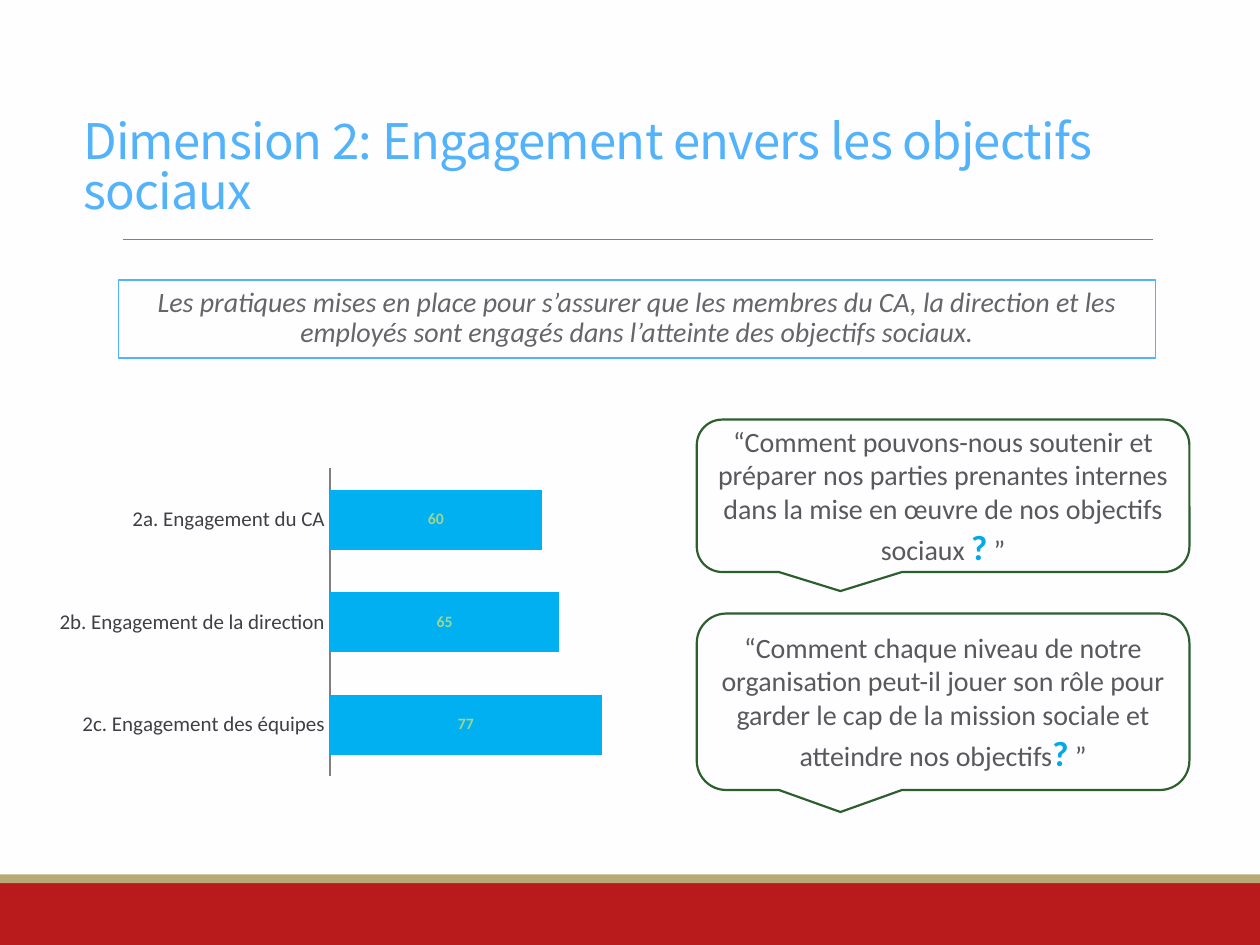
from lxml import etree
from pptx import Presentation
from pptx import oxml
from pptx.chart import data
from pptx.dml.color import RGBColor
from pptx.enum import chart as ch, shapes, text
from pptx.oxml import ns
from pptx.util import Inches, Pt

PAPER = RGBColor(0xFE, 0xFD, 0xFF)
RED = RGBColor(0xB9, 0x1A, 0x1B)
GOLD = RGBColor(0xB8, 0xAA, 0x76)
GREY = RGBColor(0x80, 0x80, 0x80)
SKY = RGBColor(0x53, 0xB3, 0xFA)
SUMMARY_GREY = RGBColor(0x66, 0x66, 0x66)
QUOTE_GREY = RGBColor(0x59, 0x59, 0x59)
MARK_BLUE = RGBColor(0x00, 0xAA, 0xE6)
GREEN = RGBColor(0x2D, 0x5F, 0x2D)
BAR_BLUE = RGBColor(0x00, 0xB0, 0xF0)
VALUE_GREEN = RGBColor(0x9D, 0xD6, 0x90)
CATEGORY_GREY = RGBColor(0x40, 0x40, 0x40)
BLACK = RGBColor(0, 0, 0)


def apply(target, values):
    for name, value in values.items():
        setattr(target, name, value)


def style_font(font, size, color, name="Calibri", bold=False, italic=False):
    apply(font, {"size": Pt(size), "name": name, "bold": bold, "italic": italic})
    font.color.rgb = color


deck = Presentation()
apply(deck, {"slide_width": Inches(10), "slide_height": Inches(7.5)})
slide = deck.slides.add_slide(deck.slide_layouts[1])
slide.background.fill.solid()
slide.background.fill.fore_color.rgb = PAPER

for top, height, color in [(7, 0.5, RED), (6.94, 0.07, GOLD)]:
    band = slide.shapes.add_shape(shapes.MSO_SHAPE.RECTANGLE, 0, Inches(top), Inches(10), Inches(height))
    band.shadow.inherit = False
    band.fill.solid()
    band.fill.fore_color.rgb = color
    band.line.fill.background()

rule = slide.shapes.add_connector(
    shapes.MSO_CONNECTOR.STRAIGHT, Inches(0.98), Inches(1.9), Inches(9.15), Inches(1.9))
rule.line.color.rgb = GREY
rule.line.width = Pt(0.5)
etree.SubElement(rule._element.spPr, ns.qn("a:effectLst"))

heading = slide.shapes.title
apply(heading, {"left": Inches(0.56), "top": Inches(0.2), "width": Inches(9.07), "height": Inches(1.59)})
heading.text_frame.text = "Dimension 2: Engagement envers les objectifs sociaux"
apply(heading.text_frame, {"vertical_anchor": text.MSO_ANCHOR.BOTTOM, "auto_size": text.MSO_AUTO_SIZE.NONE})
heading_line = heading.text_frame.paragraphs[0]
apply(heading_line, {"alignment": text.PP_ALIGN.LEFT, "line_spacing": 0.85})
style_font(heading_line.runs[0].font, 28, SKY, "Noto Sans CJK KR")
heading_line.runs[0]._r.get_or_add_rPr().set("spc", "-40")

summary = slide.placeholders[1]
apply(summary, {"left": Inches(0.94), "top": Inches(2.22), "width": Inches(8.23), "height": Inches(0.62)})
summary.line.color.rgb = SKY
summary.line.width = Pt(1)
summary.text_frame.text = (
    "Les pratiques mises en place pour s’assurer que les membres du CA, la direction "
    "et les employés sont engagés dans l’atteinte des objectifs sociaux.")
apply(summary.text_frame, {
    "vertical_anchor": text.MSO_ANCHOR.MIDDLE, "auto_size": text.MSO_AUTO_SIZE.NONE,
    "margin_left": 0, "margin_right": 0, "margin_top": Inches(0.05), "margin_bottom": Inches(0.05)})
summary_line = summary.text_frame.paragraphs[0]
apply(summary_line, {"alignment": text.PP_ALIGN.CENTER, "line_spacing": 0.9,
                     "space_before": Pt(0), "space_after": Pt(1.5)})
summary_format = summary_line._p.get_or_add_pPr()
summary_format.set("marL", "0")
summary_format.set("indent", "0")
etree.SubElement(summary_format, ns.qn("a:buNone"))
style_font(summary_line.runs[0].font, 16, SUMMARY_GREY, italic=True)

questions = [
    (3.33, 1.21, "“Comment pouvons-nous soutenir et préparer nos parties prenantes internes "
                 "dans la mise en œuvre de nos objectifs sociaux "),
    (4.87, 1.4, "“Comment chaque niveau de notre organisation peut-il jouer son rôle pour "
                "garder le cap de la mission sociale et atteindre nos objectifs"),
]
for top, height, question in questions:
    bubble = slide.shapes.add_shape(
        shapes.MSO_SHAPE.ROUNDED_RECTANGULAR_CALLOUT,
        Inches(5.53), Inches(top), Inches(3.91), Inches(height))
    bubble.shadow.inherit = False
    bubble.fill.solid()
    bubble.fill.fore_color.rgb = PAPER
    bubble.line.color.rgb = GREEN
    bubble.line.width = Pt(1.25)
    apply(bubble.text_frame, {"word_wrap": True, "vertical_anchor": text.MSO_ANCHOR.MIDDLE})
    question_line = bubble.text_frame.paragraphs[0]
    question_line.alignment = text.PP_ALIGN.CENTER
    for words, size, color, bold in [
            (question, 16, QUOTE_GREY, False), ("?", 20, MARK_BLUE, True), (" ”", 16, QUOTE_GREY, False)]:
        part = question_line.add_run()
        part.text = words
        style_font(part.font, size, color, bold=bold)

scores = data.CategoryChartData(number_format="0")
scores.categories = ["2a. Engagement du CA", "2b. Engagement de la direction", "2c. Engagement des équipes"]
scores.add_series("Series 1", [60, 65, 77])
engagement = slide.shapes.add_chart(
    ch.XL_CHART_TYPE.BAR_CLUSTERED, Inches(-0.42), Inches(2.86), Inches(5.96), Inches(4.52), scores).chart
apply(engagement, {"has_legend": False, "has_title": False})
style_font(engagement.font, 10, BLACK)

topics = engagement.category_axis
apply(topics, {"reverse_order": True, "major_tick_mark": ch.XL_TICK_MARK.NONE,
               "minor_tick_mark": ch.XL_TICK_MARK.NONE, "has_major_gridlines": False})
topics.format.line.color.rgb = GREY
style_font(topics.tick_labels.font, 12, CATEGORY_GREY)
apply(engagement.value_axis, {"minimum_scale": 0, "maximum_scale": 100,
                              "has_major_gridlines": False, "visible": False})

bars = engagement.plots[0]
apply(bars, {"gap_width": 70, "vary_by_categories": False, "has_data_labels": True})
bars.series[0].format.fill.solid()
bars.series[0].format.fill.fore_color.rgb = BAR_BLUE
apply(bars.data_labels, {"show_value": True, "position": ch.XL_LABEL_POSITION.CENTER,
                         "number_format": "0", "number_format_is_linked": False})
style_font(bars.data_labels.font, 9, VALUE_GREEN, bold=True)

plot_area = engagement._chartSpace.chart.plotArea
for layout in plot_area.findall(ns.qn("c:layout")):
    plot_area.remove(layout)
plot_area.insert(0, oxml.parse_xml(
    f'<c:layout {ns.nsdecls("c")}><c:manualLayout><c:layoutTarget val="inner"/>'
    '<c:xMode val="edge"/><c:yMode val="edge"/><c:x val="0.51"/><c:y val="0.19"/>'
    '<c:w val="0.47"/><c:h val="0.54"/></c:manualLayout></c:layout>'))

deck.save("out.pptx")
